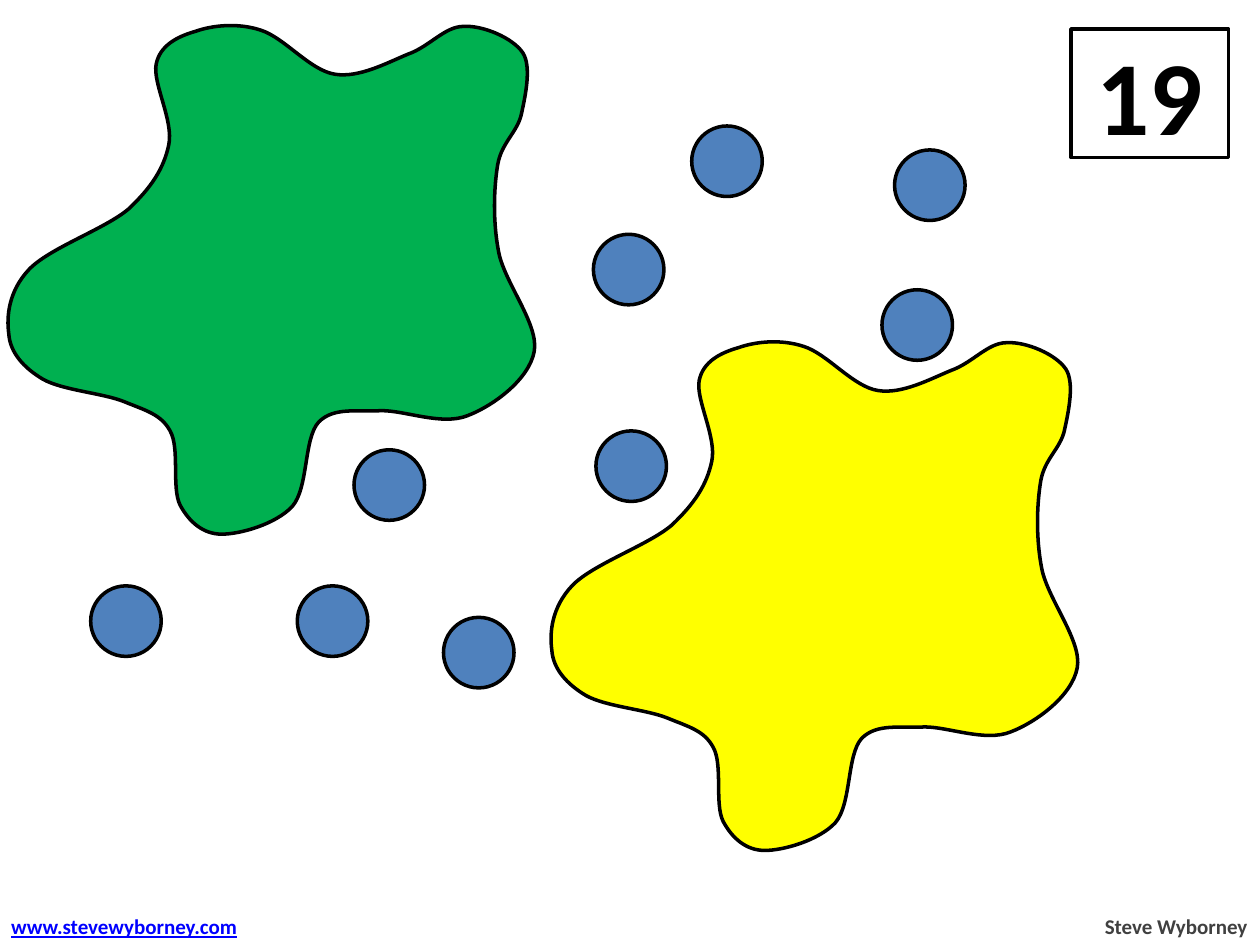
from pptx import Presentation
from pptx.dml.color import RGBColor
from pptx.enum.shapes import MSO_SHAPE
from pptx.enum.text import MSO_ANCHOR, PP_ALIGN
from pptx.oxml.ns import qn
from pptx.util import Inches, Pt
from lxml import etree

RECT, OVAL = MSO_SHAPE.RECTANGLE, MSO_SHAPE.OVAL
LEFT, CENTER, RIGHT = PP_ALIGN.LEFT, PP_ALIGN.CENTER, PP_ALIGN.RIGHT
MIDDLE = MSO_ANCHOR.MIDDLE

FONT = "Calibri"
BLACK, WHITE, GRAY = "000000", "FFFFFF", "404040"
DOT_BLUE, LINK_BLUE = "4F81BD", "0000FF"
GREEN, YELLOW = "00B050", "FFFF00"

DOT_SIZE = 0.56
DOTS = [
    (2.81, 3.57), (4.73, 3.42), (5.49, 1), (4.71, 1.86), (7, 2.3),
    (2.36, 4.65), (3.52, 4.9), (0.72, 4.65), (7.1, 1.19),
]

UNIT = Inches(0.01)
SPLAT_START = (34, 301)
SPLAT_CURVES = [
    ((19, 292), (8, 280), (7, 265)),
    ((5, 251), (7, 231), (23, 214)),
    ((39, 197), (83, 182), (102, 166)),
    ((120, 149), (130, 134), (134, 115)),
    ((138, 96), (121, 66), (124, 51)),
    ((127, 36), (141, 29), (155, 25)),
    ((169, 20), (189, 18), (207, 24)),
    ((226, 30), (246, 56), (266, 59)),
    ((285, 62), (307, 50), (324, 43)),
    ((341, 37), (353, 21), (368, 21)),
    ((383, 20), (407, 30), (415, 42)),
    ((422, 53), (417, 76), (414, 90)),
    ((411, 105), (398, 113), (395, 131)),
    ((392, 149), (391, 176), (396, 201)),
    ((401, 225), (428, 258), (424, 279)),
    ((420, 301), (392, 322), (371, 330)),
    ((351, 338), (322, 326), (303, 326)),
    ((283, 327), (265, 323), (253, 335)),
    ((241, 348), (245, 387), (232, 402)),
    ((219, 416), (191, 424), (176, 424)),
    ((161, 424), (150, 414), (143, 401)),
    ((136, 387), (143, 356), (135, 342)),
    ((128, 329), (116, 326), (99, 319)),
    ((82, 312), (50, 310), SPLAT_START),
]


def rgb(color):
    return RGBColor.from_string(color)


def style(sp, fill):
    sp.shadow.inherit = False
    sp.fill.solid()
    sp.fill.fore_color.rgb = rgb(fill)
    sp.line.color.rgb = rgb(BLACK)
    sp.line.width = Pt(2)


def write(tf, text, size=12, color=BLACK, align=LEFT, underline=False):
    p = tf.paragraphs[0]
    p.alignment = align
    r = p.add_run()
    r.text = text
    r.font.name = FONT
    r.font.size = Pt(size)
    r.font.bold = True
    r.font.underline = underline
    r.font.color.rgb = rgb(color)


def add_box(s, kind, x, y, w, h, fill):
    sp = s.shapes.add_shape(kind, Inches(x), Inches(y), Inches(w), Inches(h))
    style(sp, fill)
    return sp


def add_label(s, x, y, w, h, text, **fmt):
    tf = s.shapes.add_textbox(Inches(x), Inches(y), Inches(w), Inches(h)).text_frame
    tf.word_wrap = False
    write(tf, text, **fmt)


def add_splat(s, dx, dy, fill):
    anchors = [curve[-1] for curve in SPLAT_CURVES]
    left = min(x for x, y in anchors)
    top = min(y for x, y in anchors)
    builder = s.shapes.build_freeform(*SPLAT_START, scale=UNIT)
    builder.add_line_segments(anchors, close=True)
    sp = builder.convert_to_shape(Inches(dx), Inches(dy))
    lines = list(sp._element.iter(qn("a:lnTo")))
    for line, curve in zip(lines, SPLAT_CURVES):
        bezier = etree.Element(qn("a:cubicBezTo"))
        for x, y in curve:
            etree.SubElement(bezier, qn("a:pt"), x=str(x - left), y=str(y - top))
        line.getparent().replace(line, bezier)
    style(sp, fill)


def main():
    prs = Presentation()
    prs.slide_width, prs.slide_height = Inches(10), Inches(7.5)
    s = prs.slides.add_slide(prs.slide_layouts[6])

    tf = add_box(s, RECT, 8.5, 0.23, 1.25, 1.02, WHITE).text_frame
    tf.vertical_anchor = MIDDLE
    write(tf, "19", size=60, align=CENTER)

    add_label(s, 8.66, 7.2, 1.34, 0.3, "Steve Wyborney", color=GRAY, align=RIGHT)
    add_label(s, -0.01, 7.2, 2.05, 0.3, "www.stevewyborney.com",
              color=LINK_BLUE, underline=True)

    for x, y in DOTS:
        add_box(s, OVAL, x, y, DOT_SIZE, DOT_SIZE, DOT_BLUE)

    add_splat(s, 0, 0, GREEN)
    add_splat(s, 4.31, 2.51, YELLOW)

    prs.save("out.pptx")


if __name__ == "__main__":
    main()
